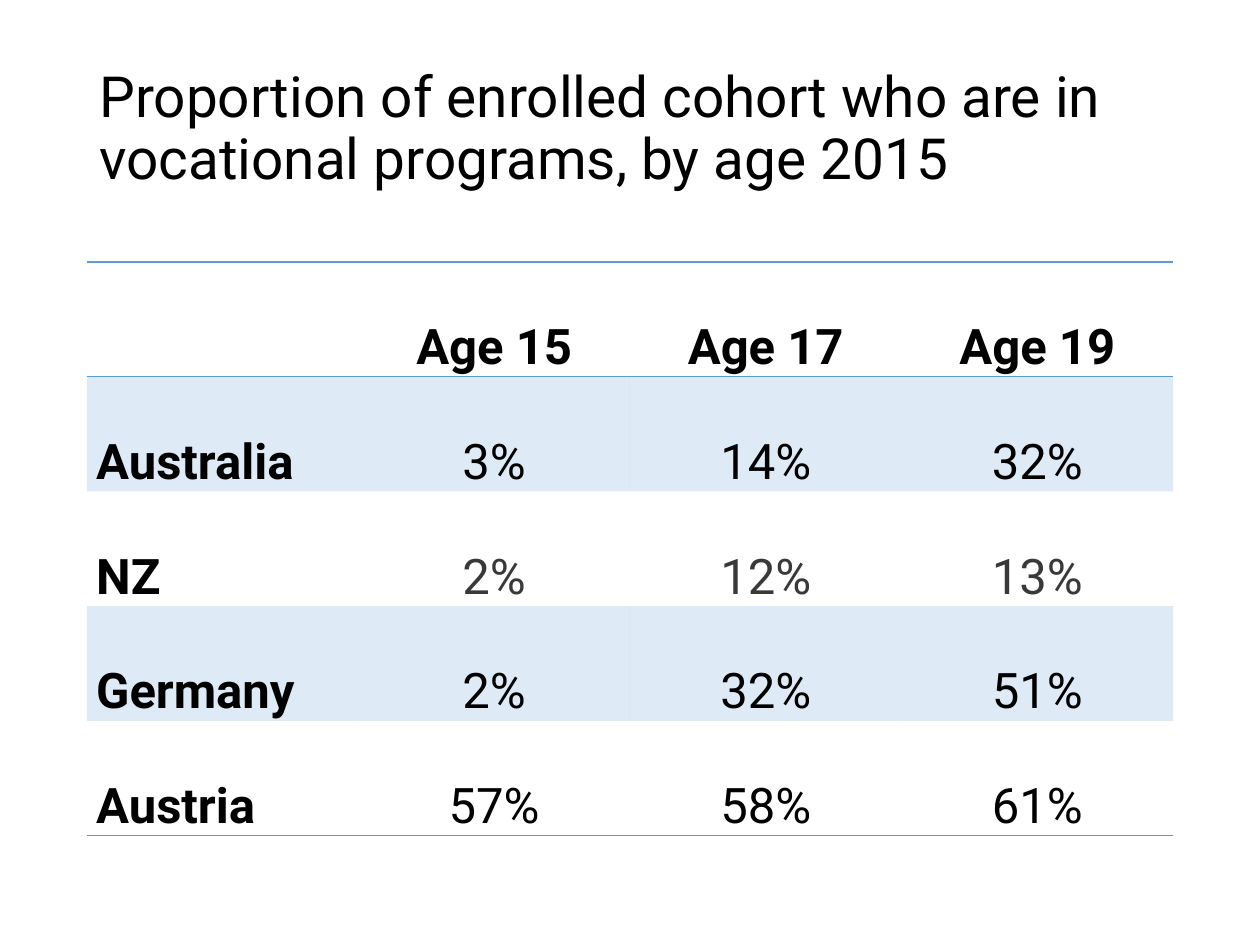
from lxml import etree
from pptx import Presentation
from pptx import util as u
from pptx.dml.color import RGBColor
from pptx.enum import text
from pptx.oxml import ns

COLORS = {"ink": "000000", "muted": "3B3838", "accent": "5B9BD5"}
PLAIN_TABLE = "{2D5ABB26-0587-4C30-8999-92F81FD0307C}"


class Deck:
    font = "Roboto"

    def __init__(self, width, height):
        self.prs = Presentation()
        self.prs.slide_width, self.prs.slide_height = width, height
        self.slide = self.prs.slides.add_slide(self.prs.slide_layouts[5])

    def styled_run(self, paragraph, words, size, color="ink", bold=False):
        run = paragraph.add_run()
        run.text = words
        run.font.name = self.font
        run.font.size = u.Pt(size)
        run.font.bold = bold
        run.font.color.rgb = RGBColor.from_string(COLORS[color])

    def title(self, words, left, top, width, height):
        heading = self.slide.shapes.title
        heading.left, heading.top = left, top
        heading.width, heading.height = width, height
        frame = heading.text_frame
        frame.word_wrap = True
        frame.auto_size = text.MSO_AUTO_SIZE.NONE
        frame.vertical_anchor = text.MSO_ANCHOR.MIDDLE
        frame.margin_bottom = u.Cm(0.6)
        line = frame.paragraphs[0]
        line.alignment = text.PP_ALIGN.LEFT
        line.line_spacing = 0.9
        self.styled_run(line, words, 32.4)

    def rule(self, cell, side):
        border = etree.SubElement(cell._tc.get_or_add_tcPr(), ns.qn(f"a:ln{side}"), w=str(u.Pt(1)))
        fill = etree.SubElement(border, ns.qn("a:solidFill"))
        etree.SubElement(fill, ns.qn("a:srgbClr"), val=COLORS["accent"])

    def shade(self, cell, banded):
        if not banded:
            cell.fill.background()
            return
        cell.fill.solid()
        cell.fill.fore_color.rgb = RGBColor.from_string(COLORS["accent"])
        tint = cell._tc.tcPr.find(ns.qn("a:solidFill") + "/" + ns.qn("a:srgbClr"))
        etree.SubElement(tint, ns.qn("a:alpha"), val="20000")

    def cell(self, cell, words, color, bold, align):
        cell.margin_left = cell.margin_right = u.Cm(0.19)
        cell.margin_top = cell.margin_bottom = 0
        cell.vertical_anchor = text.MSO_ANCHOR.MIDDLE
        line = cell.text_frame.paragraphs[0]
        line.alignment = align
        line.line_spacing = 2.0
        if words:
            self.styled_run(line, words, 28, color, bold)

    def table(self, rows, muted_row, left, top, width, height):
        frame = self.slide.shapes.add_table(len(rows), len(rows[0]), left, top, width, height)
        grid = frame.table
        grid.first_row = grid.horz_banding = False
        grid._tbl.tblPr.find(ns.qn("a:tableStyleId")).text = PLAIN_TABLE
        last = len(rows) - 1
        for r, row in enumerate(rows):
            for c, words in enumerate(row):
                cell = grid.cell(r, c)
                label = r == 0 or c == 0
                color = "muted" if r == muted_row and not label else "ink"
                align = text.PP_ALIGN.CENTER if c else text.PP_ALIGN.LEFT
                self.cell(cell, words, color, label, align)
                if r == 0:
                    self.rule(cell, "T")
                if r in (0, last):
                    self.rule(cell, "B")
                self.shade(cell, banded=r % 2 == 1)


def main():
    deck = Deck(u.Cm(25.4), u.Cm(19.05))
    deck.title("Proportion of enrolled cohort who are in vocational programs, by age 2015",
               u.Cm(1.75), u.Cm(1.02), u.Cm(21.9), u.Cm(3.68))
    enrolment = [
        ["", "Age 15", "Age 17", "Age 19"],
        ["Australia", "3%", "14%", "32%"],
        ["NZ", "2%", "12%", "13%"],
        ["Germany", "2%", "32%", "51%"],
        ["Austria", "57%", "58%", "61%"],
    ]
    deck.table(enrolment, 2, u.Cm(1.75), u.Cm(5.28), u.Cm(21.9), u.Cm(10.36))
    deck.prs.save("out.pptx")


if __name__ == "__main__":
    main()
